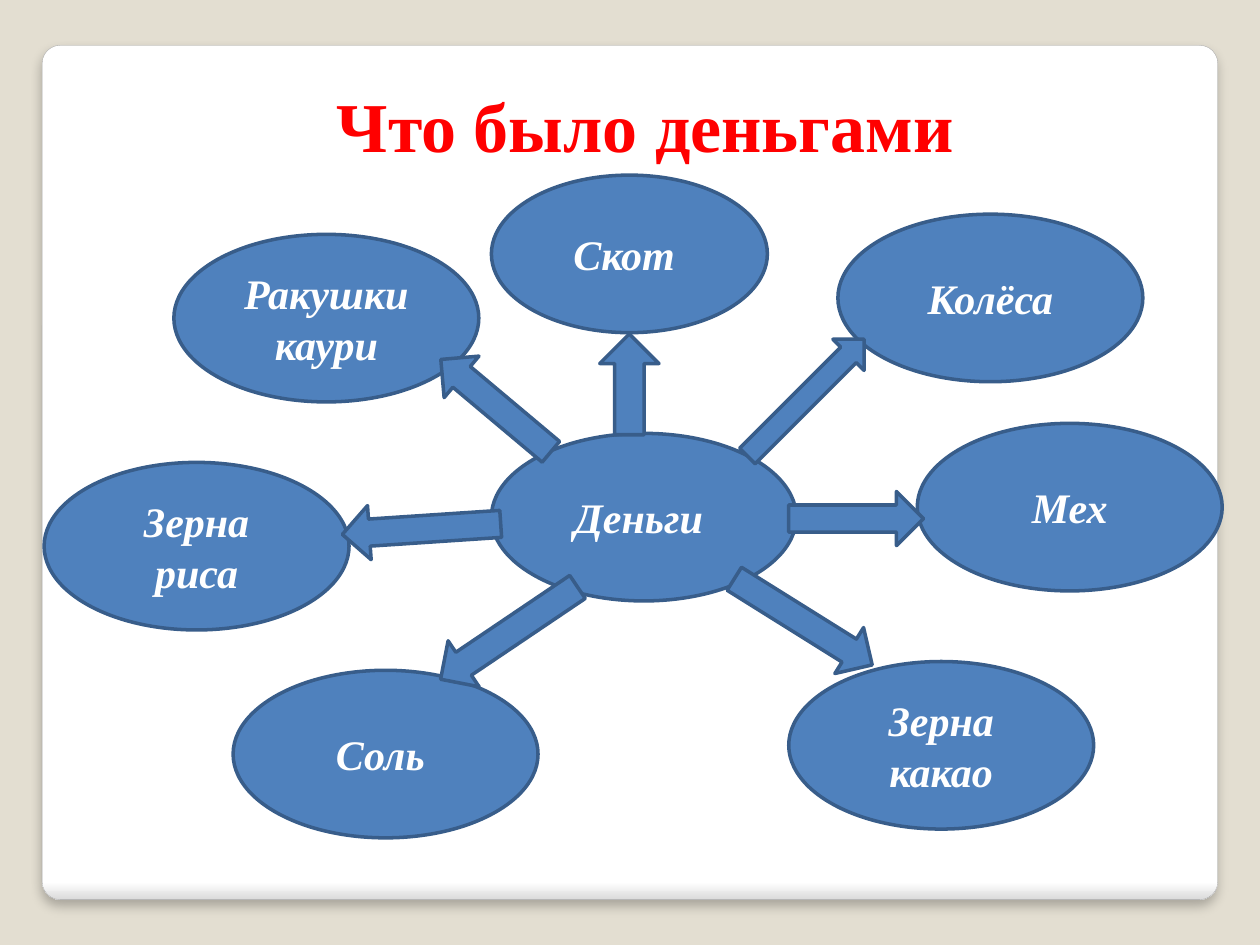
from lxml.etree import SubElement
from pptx import Presentation
from pptx.dml.color import RGBColor as RGB
from pptx.enum.shapes import MSO_SHAPE as Kind
from pptx.enum.text import MSO_ANCHOR as Anchor, PP_ALIGN as Align
from pptx.oxml.ns import qn
from pptx.util import Inches, Pt

HUE = {
    "back": "E3DED1", "white": "FFFFFF", "edge": "DADADA", "rim": "A4A4A4",
    "blue": "4F81BD", "navy": "385D8A", "red": "FF0000", "black": "000000",
}


def write(shape, text, size=24, hue="white", italic=True):
    frame = shape.text_frame
    frame.word_wrap = True
    frame.vertical_anchor = Anchor.MIDDLE
    para = frame.paragraphs[0]
    para.alignment = Align.CENTER
    run = para.add_run()
    run.text = text
    font = run.font
    font.name, font.size = "Times New Roman", Pt(size)
    font.bold, font.italic = True, italic
    font.color.rgb = RGB.from_string(HUE[hue])


def draw(kind, x, y, wide, high, line="navy", width=2):
    shape = slide.shapes.add_shape(
        kind, int((x - wide / 2) * col), int((y - high / 2) * row),
        int(wide * col), int(high * row))
    shape.shadow.inherit = False
    shape.fill.solid()
    shape.fill.fore_color.rgb = RGB.from_string(HUE["blue"])
    shape.line.color.rgb = RGB.from_string(HUE[line])
    shape.line.width = Pt(width)
    return shape


deck = Presentation()
deck.slide_width, deck.slide_height = Inches(10), Inches(7.5)
col, row = deck.slide_width / 100, deck.slide_height / 100
slide = deck.slides.add_slide(deck.slide_layouts[5])
slide.background.fill.solid()
slide.background.fill.fore_color.rgb = RGB.from_string(HUE["back"])

title = slide.shapes.title
title.left, title.top = int(12.6 * col), int(8 * row)
title.width, title.height = int(77.2 * col), int(10.27 * row)
write(title, "Что было деньгами", size=40, hue="red", italic=False)

panel = draw(Kind.ROUNDED_RECTANGLE, 50, 50, 93.3, 90.4, line="rim", width=0.16)
panel.adjustments[0] = 0.021
panel.fill.gradient()
panel.fill.gradient_angle = 270
for stop, place, hue in zip(panel.fill.gradient_stops, (0.98, 1), ("white", "edge")):
    stop.position = place
    stop.color.rgb = RGB.from_string(HUE[hue])
glow = panel._element.spPr.find(qn("a:effectLst"))
shade = SubElement(glow, qn("a:outerShdw"), blurRad=str(Pt(6)),
                   dist=str(Pt(4)), dir="5400000", rotWithShape="0")
tint = SubElement(shade, qn("a:srgbClr"), val=HUE["black"])
SubElement(tint, qn("a:alpha"), val="25000")
title._element.addprevious(panel._element)

for text, x, y, wide, high in [
    ("Деньги ", 51.1, 54.73, 24.2, 17.73),
    ("Скот ", 49.95, 26.87, 21.9, 16.67),
    ("Колёса", 78.6, 31.53, 24.2, 17.73),
    ("Мех", 84.9, 53.67, 24.2, 17.73),
    ("Ракушки каури", 25.9, 33.67, 24.2, 17.73),
    ("Зерна риса", 15.6, 57.8, 24.2, 17.73),
    ("Зерна какао", 74.7, 78.87, 24.2, 17.73),
    ("Соль ", 30.6, 79.8, 24.2, 17.73),
]:
    write(draw(Kind.OVAL, x, y, wide, high), text)

for x, y, wide, high, turn in [
    (49.95, 40.67, 4.7, 10.67, 180),
    (63.95, 42.07, 3.5, 17.47, 225),
    (63.75, 65.8, 4.3, 17.2, 302),
    (40.4, 67, 4.4, 17.47, 56),
    (39.35, 42.93, 4.3, 15.2, 130),
    (67.95, 54.87, 4.3, 14.27, 270),
    (33.45, 56, 4.3, 16.8, 86.2),
]:
    draw(Kind.DOWN_ARROW, x, y, wide, high).rotation = turn

deck.save("out.pptx")
